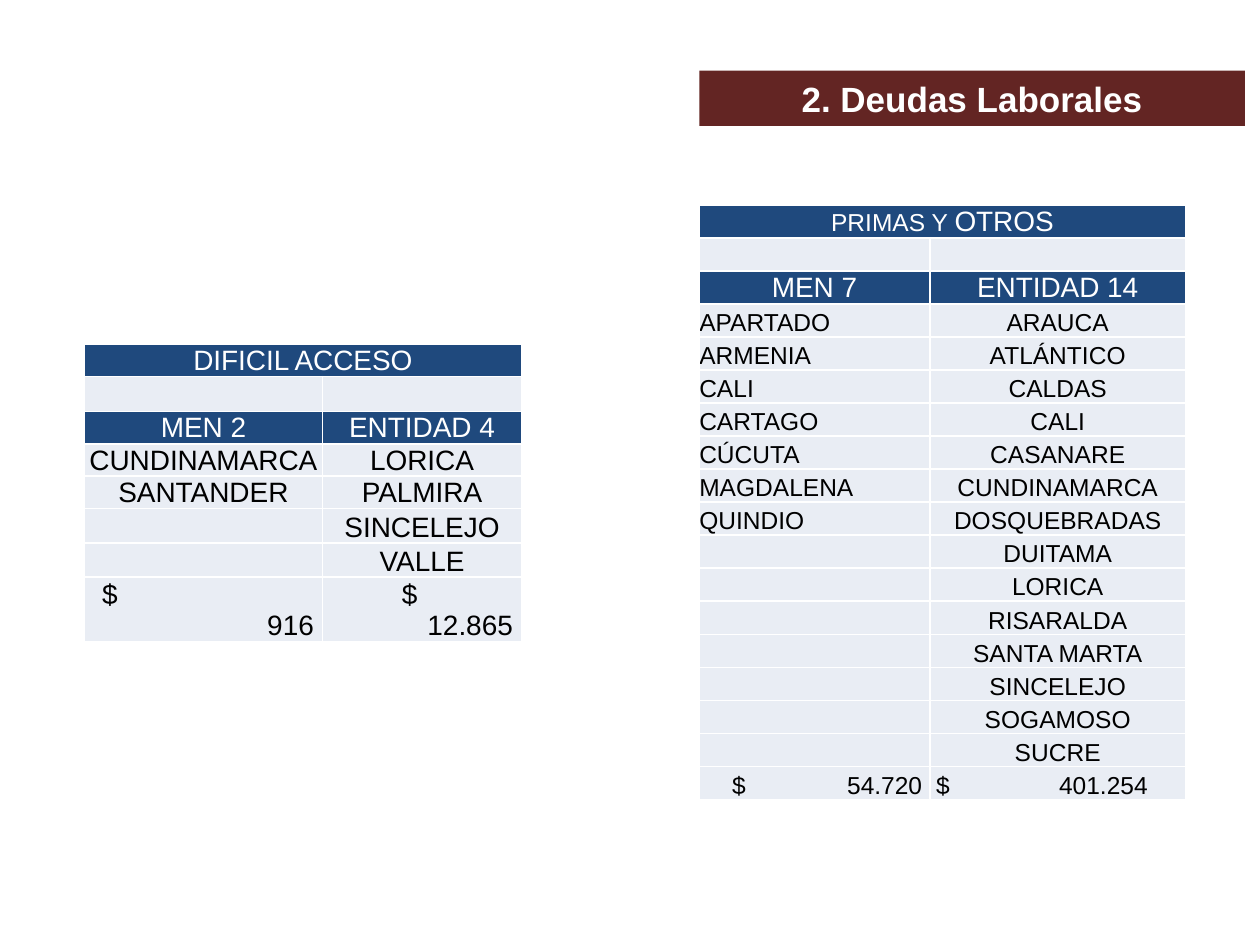
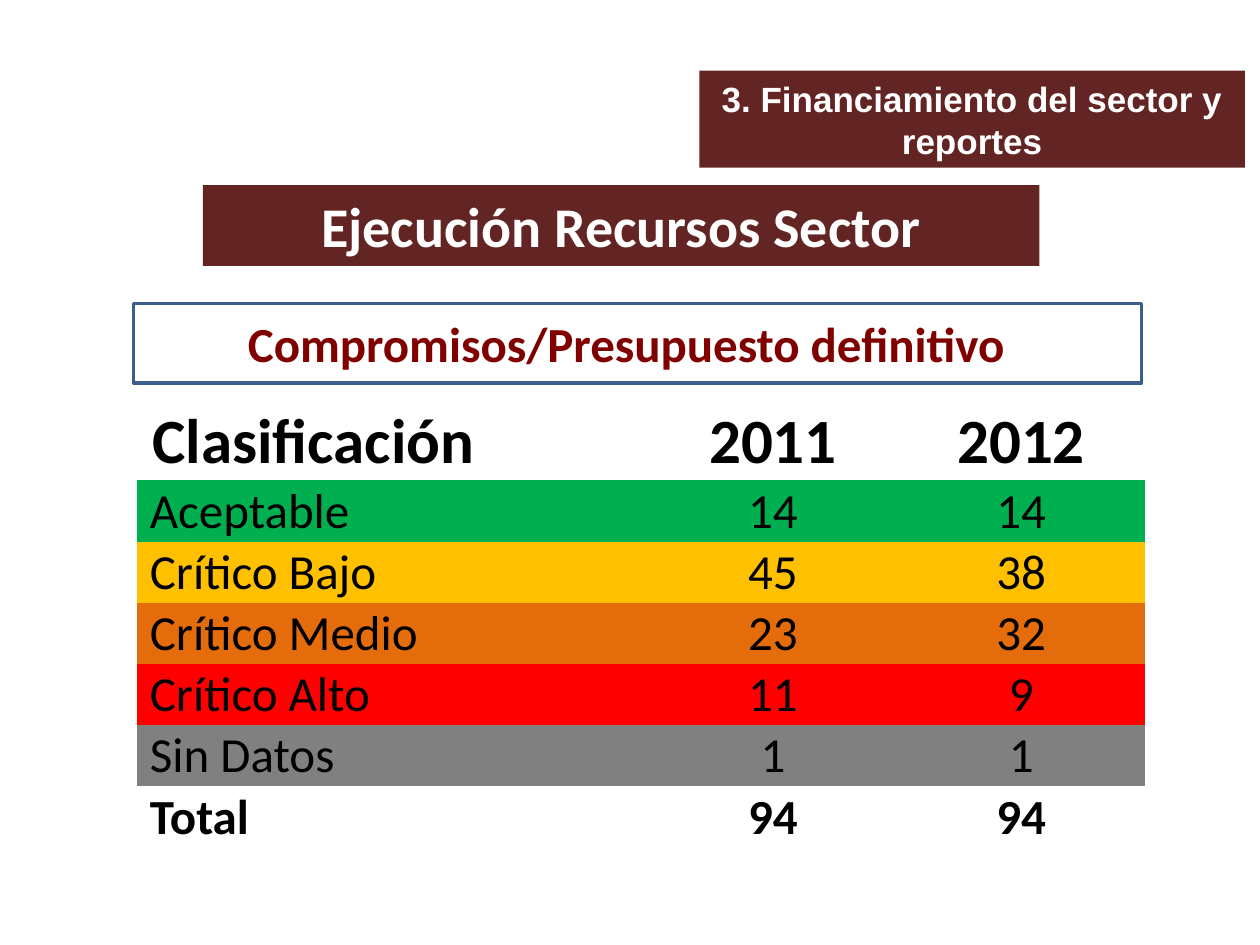
from dataclasses import dataclass
from itertools import zip_longest

from lxml.etree import SubElement
from pptx import Presentation
from pptx.dml.color import RGBColor
from pptx.enum.shapes import MSO_SHAPE
from pptx.enum.text import MSO_ANCHOR, MSO_AUTO_SIZE, PP_ALIGN
from pptx.oxml.ns import qn
from pptx.util import Inches, Pt

SLIDE_WIDTH, SLIDE_HEIGHT = Inches(10), Inches(7.5)
GRID_COLUMNS = 200
STEP = SLIDE_WIDTH / GRID_COLUMNS

WHITE, BLACK = "FFFFFF", "000000"
MAROON, DARK_RED = "632523", "800000"
NAVY, PALE, OUTLINE = "1F497D", "E9EDF4", "3A5F8C"
GREEN, AMBER, ORANGE, RED, GRAY = "00B050", "FFC000", "E46C0A", "FF0000", "808080"
NO_STYLE = "{2D5ABB26-0587-4C30-8999-92F81FD0307C}"
LEFT, CENTER, RIGHT = PP_ALIGN.LEFT, PP_ALIGN.CENTER, PP_ALIGN.RIGHT


@dataclass
class Area:
    left: float
    top: float
    width: float
    height: float

    def lengths(self) -> list:
        return [grid(n) for n in (self.left, self.top, self.width, self.height)]


@dataclass
class Style:
    font: str
    size: float
    color: str
    bold: bool = False
    align: PP_ALIGN = CENTER


@dataclass
class Band:
    text: str
    area: Area
    style: Style
    fill: str = MAROON
    line: str | None = None
    right_margin: float = 2


@dataclass
class Amount:
    value: str
    indent: float
    end: float


@dataclass
class DebtTable:
    heading: list
    counts: list
    places: list
    aligns: list
    amounts: list
    wrapped: bool
    size: float
    left: float
    top: float
    columns: list
    rows: list


@dataclass
class Level:
    values: list
    fill: str | None = None
    size: float = 28
    bold: bool = False
    indent: float = 2


def grid(steps: float) -> int:
    return round(steps * STEP)


def rgb(color: str) -> RGBColor:
    return RGBColor.from_string(color)


def format_text(text_frame, style: Style) -> None:
    for para in text_frame.paragraphs:
        para.alignment = style.align
        for span in para.runs:
            span.font.name = style.font
            span.font.size = Pt(style.size)
            span.font.bold = style.bold
            span.font.color.rgb = rgb(style.color)


def draw_band(box, band: Band) -> None:
    box.left, box.top, box.width, box.height = band.area.lengths()
    box.fill.solid()
    box.fill.fore_color.rgb = rgb(band.fill)
    if band.line:
        box.line.color.rgb = rgb(band.line)
        box.line.width = Pt(2)
    else:
        box.line.fill.background()
    frame = box.text_frame
    frame.text = band.text
    frame.word_wrap = True
    frame.auto_size = MSO_AUTO_SIZE.NONE
    frame.vertical_anchor = MSO_ANCHOR.MIDDLE
    frame.margin_right = grid(band.right_margin)
    format_text(frame, band.style)


def add_band(page, band: Band) -> None:
    box = page.shapes.add_shape(MSO_SHAPE.RECTANGLE, *band.area.lengths())
    box.shadow.inherit = False
    draw_band(box, band)


def add_page(deck, title: str, title_height: float):
    page = deck.slides.add_slide(deck.slide_layouts[5])
    area = Area(111, 11.2, 86.6, title_height)
    draw_band(page.shapes.title, Band(title, area, Style("Arial", 20, WHITE, True)))
    return page


def add_grid(page, left: float, top: float, columns: list, rows: list):
    area = Area(left, top, sum(columns), sum(rows))
    table = page.shapes.add_table(len(rows), len(columns), *area.lengths()).table
    table.first_row = table.horz_banding = False
    table._tbl.tblPr.find(qn("a:tableStyleId")).text = NO_STYLE
    for column, width in zip(table.columns, columns):
        column.width = grid(width)
    for row, height in zip(table.rows, rows):
        row.height = grid(height)
    return table


def add_borders(cell) -> None:
    properties = cell._tc.get_or_add_tcPr()
    for side in ("lnL", "lnR", "lnT", "lnB"):
        line = SubElement(properties, qn(f"a:{side}"), w=str(Pt(1)))
        fill = SubElement(line, qn("a:solidFill"))
        SubElement(fill, qn("a:srgbClr"), val=WHITE)


def fill_cell(cell, text: str, style: Style, fill: str | None, indent: float = 0) -> None:
    cell.vertical_anchor = MSO_ANCHOR.BOTTOM
    cell.margin_left = grid(indent)
    cell.margin_right = cell.margin_top = cell.margin_bottom = 0
    if fill:
        cell.fill.solid()
        cell.fill.fore_color.rgb = rgb(fill)
    else:
        cell.fill.background()
    cell.text_frame.text = text
    format_text(cell.text_frame, style)
    if not text:
        para = cell.text_frame.paragraphs[0]
        SubElement(para._p, qn("a:endParaRPr"), sz=str(int(style.size * 100)))


def add_amount(cell, amount: Amount, debt: DebtTable) -> None:
    separator = "\n" if debt.wrapped else "\t"
    style = Style("Arial", debt.size, BLACK, align=LEFT)
    fill_cell(cell, f"${separator}{amount.value}", style, PALE, amount.indent)
    para = cell.text_frame.paragraphs[-1]
    if debt.wrapped:
        para.alignment = RIGHT
        cell.margin_right = grid(amount.end)
    else:
        tabs = SubElement(para._p.get_or_add_pPr(), qn("a:tabLst"))
        SubElement(tabs, qn("a:tab"), pos=str(grid(amount.end)), algn="r")


def add_debts(page, debt: DebtTable) -> None:
    table = add_grid(page, debt.left, debt.top, debt.columns, debt.rows)
    for cell in table.iter_cells():
        add_borders(cell)
    header = Style("Arial", 16, WHITE)
    blank = Style("Arial", 12, BLACK)
    table.cell(0, 0).merge(table.cell(0, 1))
    heading = table.cell(0, 0)
    fill_cell(heading, "", header, NAVY)
    for text, size in debt.heading:
        span = heading.text_frame.paragraphs[0].add_run()
        span.text = text
    format_text(heading.text_frame, header)
    for span, (text, size) in zip(heading.text_frame.paragraphs[0].runs, debt.heading):
        span.font.size = Pt(size)
    last = len(debt.rows) - 1
    for column, align in enumerate(debt.aligns):
        fill_cell(table.cell(1, column), "", blank, PALE)
        fill_cell(table.cell(2, column), debt.counts[column], header, NAVY)
        add_amount(table.cell(last, column), debt.amounts[column], debt)
    for row, names in enumerate(zip_longest(*debt.places, fillvalue=""), start=3):
        for column, name in enumerate(names):
            style = Style("Arial", debt.size, BLACK, align=debt.aligns[column])
            fill_cell(table.cell(row, column), name, style, PALE)


def add_levels(page, levels: list) -> None:
    rows = [12.4] + [9.6] * (len(levels) - 1)
    table = add_grid(page, 21.8, 63.8, [81.2, 39.4, 39.4], rows)
    for row, level in enumerate(levels):
        for column, value in enumerate(level.values):
            align = CENTER if column else LEFT
            style = Style("Calibri", level.size, BLACK, level.bold, align)
            cell = table.cell(row, column)
            fill_cell(cell, value, style, level.fill, 0 if column else level.indent)
            cell.margin_top = grid(0.2)


ACCESS = DebtTable(
    heading=[("DIFICIL ACCESO", 16)],
    counts=["MEN 2", "ENTIDAD 4"],
    places=[["CUNDINAMARCA", "SANTANDER"], ["LORICA", "PALMIRA", "SINCELEJO", "VALLE"]],
    aligns=[CENTER, CENTER],
    amounts=[Amount("916", 2.8, 1.4), Amount("12.865", 12.6, 1.4)],
    wrapped=True,
    size=16,
    left=13.4,
    top=54.6,
    columns=[37.8, 31.6],
    rows=[5.2, 5.5] + [5.15] * 5 + [10.2],
)

BONUSES = DebtTable(
    heading=[("PRIMAS Y ", 14), ("OTROS", 16)],
    counts=["MEN 7", "ENTIDAD 14"],
    places=[
        ["APARTADO", "ARMENIA", "CALI", "CARTAGO", "CÚCUTA", "MAGDALENA", "QUINDIO"],
        ["ARAUCA", "ATLÁNTICO", "CALDAS", "CALI", "CASANARE", "CUNDINAMARCA",
         "DOSQUEBRADAS", "DUITAMA", "LORICA", "RISARALDA", "SANTA MARTA",
         "SINCELEJO", "SOGAMOSO", "SUCRE"],
    ],
    aligns=[LEFT, CENTER],
    amounts=[Amount("54.720", 5.2, 30.2), Amount("401.254", 1, 33.6)],
    wrapped=False,
    size=14,
    left=111,
    top=32.5,
    columns=[36.6, 40.6],
    rows=[5.25] * 18,
)

LEVELS = [
    Level(["Clasificación", "2011", "2012"], size=36, bold=True, indent=2.4),
    Level(["Aceptable", "14", "14"], GREEN),
    Level(["Crítico Bajo", "45", "38"], AMBER),
    Level(["Crítico Medio", "23", "32"], ORANGE),
    Level(["Crítico Alto", "11", "9"], RED),
    Level(["Sin Datos", "1", "1"], GRAY),
    Level(["Total", "94", "94"], bold=True),
]

EXECUTION_BANDS = [
    Band("Compromisos/Presupuesto definitivo", Area(21.2, 48.2, 160, 12.6),
         Style("Calibri", 28, DARK_RED, True), WHITE, OUTLINE, 5.6),
    Band("Ejecución Recursos Sector", Area(32.2, 29.4, 132.8, 12.8),
         Style("Calibri", 32, WHITE, True)),
]


def main() -> None:
    deck = Presentation()
    deck.slide_width, deck.slide_height = SLIDE_WIDTH, SLIDE_HEIGHT

    debts_page = add_page(deck, "2. Deudas Laborales", 8.8)
    for debt in (ACCESS, BONUSES):
        add_debts(debts_page, debt)

    execution_page = add_page(deck, "3. Financiamiento del sector y reportes", 15.4)
    for band in EXECUTION_BANDS:
        add_band(execution_page, band)
    add_levels(execution_page, LEVELS)

    deck.save("out.pptx")


if __name__ == "__main__":
    main()
